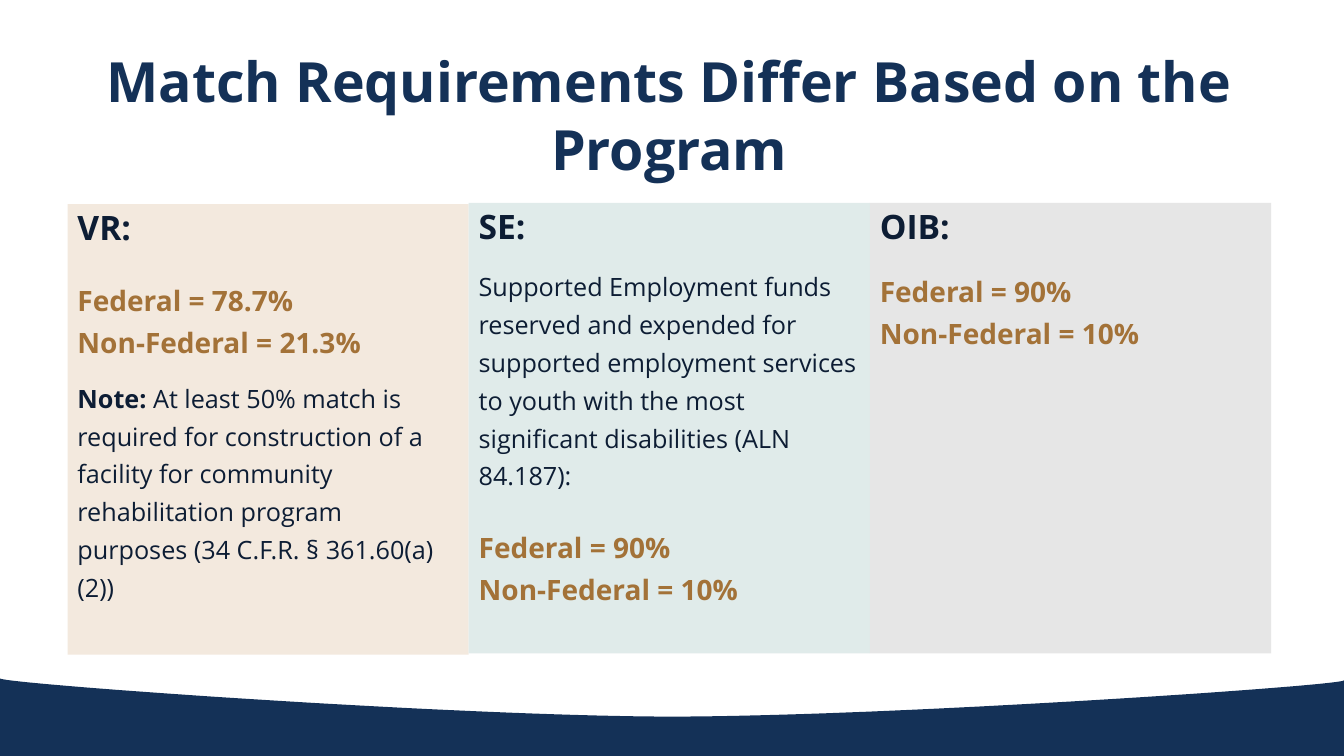
from dataclasses import dataclass

from pptx import Presentation
from pptx.dml.color import RGBColor as RGB
from pptx.enum.shapes import MSO_SHAPE as SHAPE
from pptx.enum.text import MSO_ANCHOR as ANCHOR, PP_ALIGN as ALIGN
from pptx.util import Pt

COLORS = {
    "navy": "143157", "ink": "0D1D34", "gold": "A37238",
    "sand": "F3E9DE", "mint": "E0EBEA", "grey": "E6E6E6",
}
FONT = "Open Sans"
SLIDE_W, SLIDE_H = 960, 540
PANEL_LEFT, PANEL_W, PANEL_H = 48.24, 286.56, 321.84
CURVE_STEPS = 40


@dataclass
class Run:
    text: str
    size: float = 18
    color: str = "ink"
    bold: bool = False


@dataclass
class Para:
    runs: list[Run]
    spacing: float = 1.25
    before: float = 0


@dataclass
class Panel:
    top: float
    fill: str
    paras: list[Para]


def heading(text: str) -> Para:
    return Para([Run(text, 24, bold=True)], spacing=0.98)


def shares(federal: str, non_federal: str, before: float) -> list[Para]:
    return [
        Para([Run(f"Federal = {federal}", 20, "gold", True)], before=before),
        Para([Run(f"Non-Federal = {non_federal}", 20, "gold", True)]),
    ]


PANELS = [
    Panel(145.8, "sand", [
        heading("VR:"),
        *shares("78.7%", "21.3%", before=18.7),
        Para([
            Run("Note: ", bold=True),
            Run("At least 50% match is required for construction of a facility "
                "for community rehabilitation program purposes "
                "(34 C.F.R. § 361.60(a)(2))"),
        ], before=12),
    ]),
    Panel(145, "mint", [
        heading("SE:"),
        Para([Run("Supported Employment funds reserved and expended for "
                  "supported employment services to youth with the most "
                  "significant disabilities (ALN 84.187):")], before=12),
        *shares("90%", "10%", before=22.2),
    ]),
    Panel(145, "grey", [
        heading("OIB:"),
        *shares("90%", "10%", before=13.3),
    ]),
]

Point = tuple[float, float]
WAVE_START: Point = (0, 484.6)
WAVE_TOP: list[tuple[Point, Point, Point]] = [
    ((0, 488.2), (316.8, 511.2), (476.6, 511.9)),
    ((637.2, 511.9), (960, 489.6), (960, 486)),
]


def curve(a: Point, b: Point, c: Point, d: Point) -> list[Point]:
    points = []
    for i in range(1, CURVE_STEPS + 1):
        t = i / CURVE_STEPS
        u = 1 - t
        x, y = (u**3 * a[k] + 3 * u * u * t * b[k] + 3 * u * t * t * c[k]
                + t**3 * d[k] for k in (0, 1))
        points.append((Pt(x), Pt(y)))
    return points


def paint(sp, color: str) -> None:
    sp.fill.solid()
    sp.fill.fore_color.rgb = RGB.from_string(COLORS[color])
    sp.line.fill.background()
    sp.shadow.inherit = False


def write(sp, paras: list[Para], *, align=ALIGN.LEFT, anchor=ANCHOR.TOP) -> None:
    tf = sp.text_frame
    tf.word_wrap = True
    tf.vertical_anchor = anchor
    tf.margin_left = tf.margin_right = Pt(7.2)
    tf.margin_top = tf.margin_bottom = Pt(3.6)
    for i, para in enumerate(paras):
        p = tf.add_paragraph() if i else tf.paragraphs[0]
        p.alignment = align
        p.line_spacing = para.spacing
        if para.before:
            p.space_before = Pt(para.before)
        for run in para.runs:
            r = p.add_run()
            r.text = run.text
            r.font.name = FONT
            r.font.size = Pt(run.size)
            r.font.bold = run.bold
            r.font.color.rgb = RGB.from_string(COLORS[run.color])


def draw_footer(s) -> None:
    start = WAVE_START
    builder = s.shapes.build_freeform(Pt(start[0]), Pt(start[1]))
    for b, c, end in WAVE_TOP:
        builder.add_line_segments(curve(start, b, c, end), close=False)
        start = end
    builder.add_line_segments([(Pt(SLIDE_W), Pt(SLIDE_H)), (0, Pt(SLIDE_H))])
    paint(builder.convert_to_shape(), "navy")


def draw_title(s) -> None:
    sp = s.shapes.add_textbox(Pt(48.24), Pt(28.8), Pt(859.68), Pt(104.4))
    title = Run("Match Requirements Differ Based on the Program", 39.6, "navy", True)
    write(sp, [Para([title], 1.02)], align=ALIGN.CENTER, anchor=ANCHOR.BOTTOM)


def draw_panel(s, index: int, panel: Panel) -> None:
    sp = s.shapes.add_shape(SHAPE.RECTANGLE, Pt(PANEL_LEFT + index * PANEL_W),
                            Pt(panel.top), Pt(PANEL_W), Pt(PANEL_H))
    paint(sp, panel.fill)
    write(sp, panel.paras)


def main() -> None:
    prs = Presentation()
    prs.slide_width, prs.slide_height = Pt(SLIDE_W), Pt(SLIDE_H)
    s = prs.slides.add_slide(prs.slide_layouts[6])
    draw_footer(s)
    draw_title(s)
    for index, panel in enumerate(PANELS):
        draw_panel(s, index, panel)
    prs.save("out.pptx")


if __name__ == "__main__":
    main()
